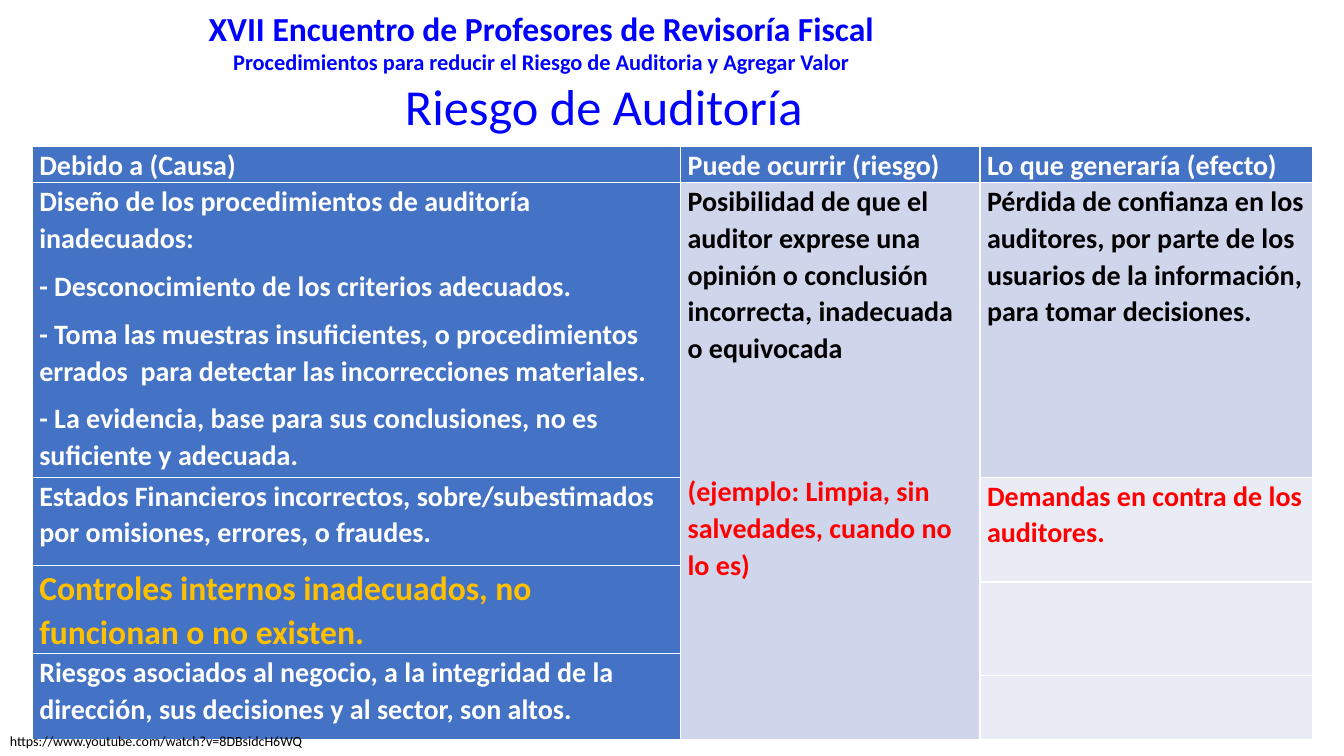
from pptx import Presentation
from pptx.dml.color import RGBColor
from pptx.enum.text import MSO_ANCHOR, PP_ALIGN
from pptx.oxml import parse_xml
from pptx.oxml.ns import nsdecls
from pptx.util import Inches, Pt

# Content
FONT = "Calibri"
BLUE, WHITE, BLACK, RED, GOLD = "0000FF", "FFFFFF", "000000", "FF0000", "FFC000"
HEADER_FILL, RISK_FILL, EFFECT_FILL = "4472C4", "CFD5EA", "E9EBF5"

# Text boxes: left, top, width, height, alignment, anchor, line spacing,
# lines of (text, size, colour, bold)
TEXT_BOXES = [
    (1.94, 0.03, 6.86, 0.77, PP_ALIGN.CENTER, MSO_ANCHOR.TOP, 1.0, [
        ("XVII Encuentro de Profesores de Revisoría Fiscal", 24, BLUE, True),
        ("Procedimientos para reducir el Riesgo de Auditoria y Agregar Valor", 16, BLUE, True),
    ]),
    (1.95, 0.65, 8.08, 0.87, PP_ALIGN.CENTER, MSO_ANCHOR.MIDDLE, 0.9, [
        ("Riesgo de Auditoría", 36, BLUE, False),
    ]),
    (0, 7.22, 6.67, 0.27, PP_ALIGN.LEFT, MSO_ANCHOR.TOP, 1.0, [
        ("https://www.youtube.com/watch?v=8DBsidcH6WQ", 10, BLACK, False),
    ]),
]

TABLE_LEFT, TABLE_TOP = 0.32, 1.45
COLUMN_WIDTHS = [6.43, 2.97, 3.3]
ROW_HEIGHTS = [0.35, 2.92, 0.88, 0.16, 0.69, 0.22, 0.63]

# Cells: row, column, rows spanned, fill, paragraphs of
# (text, size, colour, space before)
CELLS = [
    (0, 0, 1, HEADER_FILL, [("Debido a (Causa)", 20, WHITE, 0)]),
    (0, 1, 1, HEADER_FILL, [("Puede ocurrir (riesgo)", 20, WHITE, 0)]),
    (0, 2, 1, HEADER_FILL, [("Lo que generaría (efecto)", 20, WHITE, 0)]),
    (1, 0, 1, HEADER_FILL, [
        ("Diseño de los procedimientos de auditoría inadecuados:", 20, WHITE, 0),
        ("- Desconocimiento de los criterios adecuados.", 20, WHITE, 0),
        ("- Toma las muestras insuficientes, o procedimientos errados  para detectar "
         "las incorrecciones materiales.", 20, WHITE, 0),
        ("- La evidencia, base para sus conclusiones, no es suficiente y adecuada.",
         20, WHITE, 0),
    ]),
    (1, 1, 6, RISK_FILL, [
        ("Posibilidad de que el auditor exprese una opinión o conclusión incorrecta, "
         "inadecuada o equivocada", 20, BLACK, 0),
        ("(ejemplo: Limpia, sin salvedades, cuando no lo es)", 20, RED, 68),
    ]),
    (1, 2, 1, RISK_FILL, [
        ("Pérdida de confianza en los auditores, por parte de los usuarios de la "
         "información, para tomar decisiones.", 20, BLACK, 0),
    ]),
    (2, 0, 1, HEADER_FILL, [
        ("Estados Financieros incorrectos, sobre/subestimados por omisiones, errores, "
         "o fraudes.", 20, WHITE, 0),
    ]),
    (2, 2, 2, EFFECT_FILL, [("Demandas en contra de los auditores.", 20, RED, 0)]),
    (3, 0, 2, HEADER_FILL, [
        ("Controles internos inadecuados, no funcionan o no existen.", 24, GOLD, 0),
    ]),
    (4, 2, 2, EFFECT_FILL, []),
    (5, 0, 2, HEADER_FILL, [
        ("Riesgos asociados al negocio, a la integridad de la dirección, sus decisiones "
         "y al sector, son altos.", 20, WHITE, 0),
    ]),
    (6, 2, 1, EFFECT_FILL, []),
]


def color(hex_value):
    return RGBColor.from_string(hex_value)


def add_run(paragraph, text, size, hex_value, bold):
    run = paragraph.add_run()
    run.text = text
    run.font.name = FONT
    run.font.size = Pt(size)
    run.font.bold = bold
    run.font.color.rgb = color(hex_value)


def next_paragraph(frame, index):
    return frame.add_paragraph() if index else frame.paragraphs[0]


def add_text_box(slide, left, top, width, height, alignment, anchor, spacing, lines):
    shape = slide.shapes.add_textbox(Inches(left), Inches(top), Inches(width), Inches(height))
    frame = shape.text_frame
    frame.word_wrap = True
    frame.vertical_anchor = anchor
    for index, line in enumerate(lines):
        paragraph = next_paragraph(frame, index)
        paragraph.alignment = alignment
        paragraph.line_spacing = spacing
        add_run(paragraph, *line)


def format_cell(cell, fill):
    cell.margin_left = cell.margin_right = Inches(0.07)
    cell.margin_top = cell.margin_bottom = 0
    # Borders come before the fill in the cell properties
    properties = cell._tc.get_or_add_tcPr()
    for side in ("lnL", "lnR", "lnT", "lnB"):
        properties.append(parse_xml(
            f'<a:{side} {nsdecls("a")} w="{Pt(1)}"><a:solidFill>'
            f'<a:srgbClr val="{WHITE}"/></a:solidFill></a:{side}>'))
    cell.fill.solid()
    cell.fill.fore_color.rgb = color(fill)


def add_risk_table(slide):
    table = slide.shapes.add_table(
        len(ROW_HEIGHTS), len(COLUMN_WIDTHS), Inches(TABLE_LEFT), Inches(TABLE_TOP),
        Inches(sum(COLUMN_WIDTHS)), Inches(sum(ROW_HEIGHTS))).table
    table.horz_banding = False
    for column, width in zip(table.columns, COLUMN_WIDTHS):
        column.width = Inches(width)
    for row, height in zip(table.rows, ROW_HEIGHTS):
        row.height = Inches(height)

    for row, column, span, fill, paragraphs in CELLS:
        for covered_row in range(row, row + span):
            format_cell(table.cell(covered_row, column), fill)
        cell = table.cell(row, column)
        if span > 1:
            cell.merge(table.cell(row + span - 1, column))
        for index, (text, size, hex_value, space_before) in enumerate(paragraphs):
            paragraph = next_paragraph(cell.text_frame, index)
            paragraph.line_spacing = 1.07
            paragraph.space_after = Pt(8)
            if space_before:
                paragraph.space_before = Pt(space_before)
            add_run(paragraph, text, size, hex_value, True)


def main():
    presentation = Presentation()
    presentation.slide_width = Inches(13.33)
    presentation.slide_height = Inches(7.5)
    slide = presentation.slides.add_slide(presentation.slide_layouts[6])

    # Table first, then headings and source link
    add_risk_table(slide)
    for text_box in TEXT_BOXES:
        add_text_box(slide, *text_box)

    presentation.save("out.pptx")


if __name__ == "__main__":
    main()
